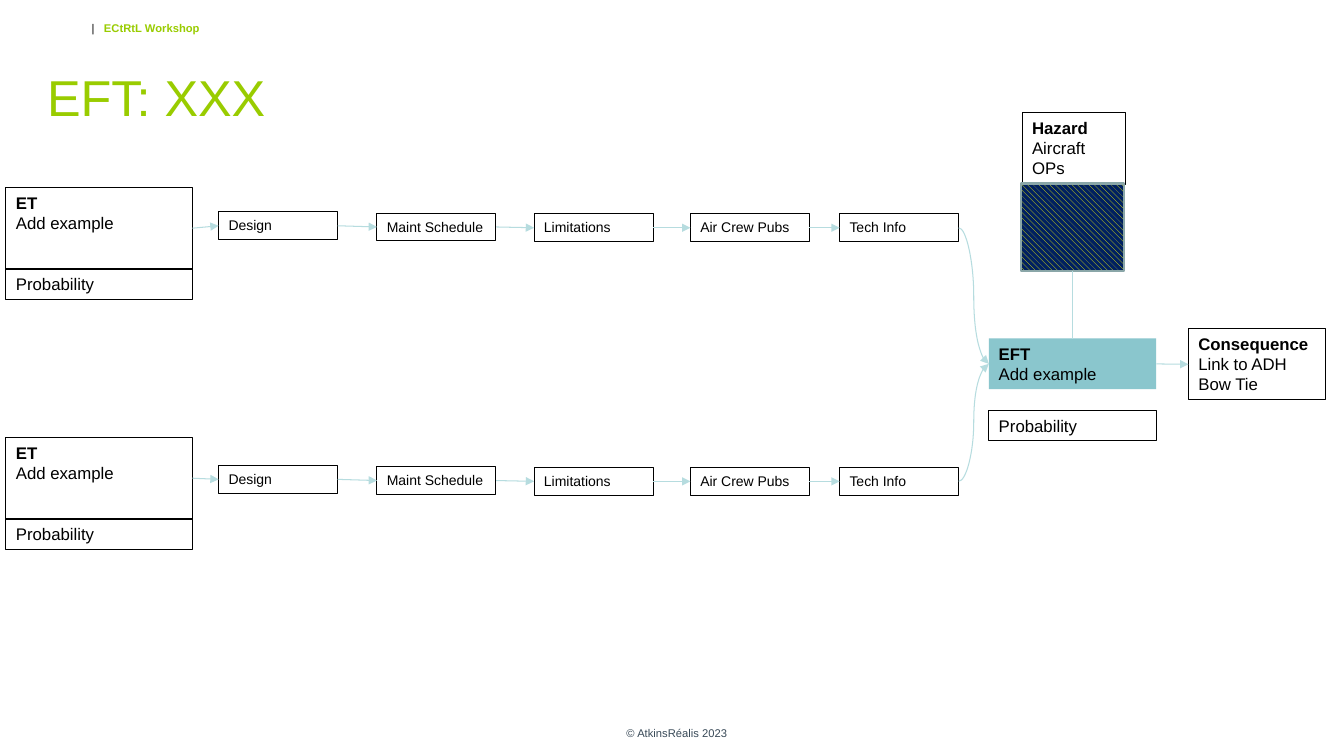
from itertools import pairwise

from lxml import etree
from pptx import Presentation
from pptx.dml.color import RGBColor
from pptx.enum.dml import MSO_PATTERN
from pptx.enum.shapes import MSO_CONNECTOR as Link, MSO_SHAPE as Preset
from pptx.enum.text import MSO_ANCHOR as Anchor, PP_ALIGN as Align
from pptx.oxml.ns import qn
from pptx.util import Cm, Pt

COLORS = {
    "black": "000000",
    "green": "99CC00",
    "slate": "394A58",
    "teal": "8AC6CD",
    "arrow": "B6DCDF",
    "barrier_line": "8AA6A8",
    "yellow": "FFFF00",
    "navy": "002060",
}
TOP, LEFT, BOTTOM, RIGHT = range(4)  # connection sites of a rectangle

# label, left edge, drop below the first step (cm)
STEPS = [
    ("Design", 5.51, 0),
    ("Maint Schedule", 9.5, 0.03),
    ("Limitations", 13.46, 0.05),
    ("Air Crew Pubs", 17.4, 0.05),
    ("Tech Info", 21.16, 0.05),
]
# top of the threat box, top of the first step (cm)
THREAT_ROWS = [(4.72, 5.34), (11.02, 11.73)]


def rgb(color):
    return RGBColor.from_string(COLORS[color])


def add_run(paragraph, text, size=12, color="black", bold=False):
    run = paragraph.add_run()
    run.text = text
    run.font.name = "Arial"
    run.font.size = Pt(size)
    run.font.bold = bold
    run.font.color.rgb = rgb(color)


class Diagram:
    """Draws styled elements on one slide; all positions are in cm."""

    def __init__(self, slide):
        self.slide = slide

    def text(self, at, content, align=Align.LEFT, anchor=Anchor.TOP, **style):
        frame = self.slide.shapes.add_textbox(*map(Cm, at)).text_frame
        frame.word_wrap = True
        frame.vertical_anchor = anchor
        frame.paragraphs[0].alignment = align
        add_run(frame.paragraphs[0], content, **style)
        return frame

    def header(self, at, title):
        frame = self.text(at, "|\t", size=8)
        frame.margin_left = frame.margin_right = 0
        frame.margin_top = frame.margin_bottom = 0
        line = frame.paragraphs[0]
        tabs = etree.SubElement(line._p.get_or_add_pPr(), qn("a:tabLst"))
        etree.SubElement(tabs, qn("a:tab"), pos=str(Cm(0.31)), algn="l")
        add_run(line, title, size=8, color="green", bold=True)

    def box(self, at, heading=None, body=None, size=12, fill=None,
            line="black", line_width=0.75):
        """Rectangle with a bold heading above plain body text."""
        box = self.slide.shapes.add_shape(Preset.RECTANGLE, *map(Cm, at))
        box.shadow.inherit = False
        if fill:
            box.fill.solid()
            box.fill.fore_color.rgb = rgb(fill)
        else:
            box.fill.background()
        if line:
            box.line.color.rgb = rgb(line)
            box.line.width = Pt(line_width)
        else:
            box.line.fill.background()
        frame = box.text_frame
        frame.word_wrap = True
        frame.vertical_anchor = Anchor.TOP
        paragraph = frame.paragraphs[0]
        paragraph.alignment = Align.LEFT
        if heading:
            add_run(paragraph, heading, size, bold=True)
            paragraph = frame.add_paragraph()
            paragraph.alignment = Align.LEFT
        if body:
            add_run(paragraph, body, size)
        return box

    def barrier(self, at):
        barrier = self.box(at, line="barrier_line", line_width=2)
        barrier.fill.patterned()
        barrier.fill.pattern = MSO_PATTERN.WIDE_DOWNWARD_DIAGONAL
        barrier.fill.fore_color.rgb = rgb("yellow")
        barrier.fill.back_color.rgb = rgb("navy")
        return barrier

    def connect(self, start, end, sites=(RIGHT, LEFT), kind=Link.STRAIGHT,
                arrow=True):
        link = self.slide.shapes.add_connector(kind, 0, 0, 0, 0)
        link.begin_connect(start, sites[0])
        link.end_connect(end, sites[1])
        link.line.color.rgb = rgb("arrow")
        link.line.width = Pt(0.75)
        if arrow:
            etree.SubElement(link.line._get_or_add_ln(), qn("a:tailEnd"),
                             type="triangle")
        etree.SubElement(link._element.spPr, qn("a:effectLst"))

    def threat_row(self, threat_top, steps_top, event):
        """Threat with its probability, then the chain of steps to the event."""
        threat = self.box((0.15, threat_top, 4.7, 2.06), "ET", "Add example")
        self.box((0.15, threat_top + 2.06, 4.7, 0.77), body="Probability")
        steps = [self.box((left, steps_top + drop, 3, 0.7), body=label, size=10)
                 for label, left, drop in STEPS]
        for start, end in pairwise([threat, *steps]):
            self.connect(start, end)
        self.connect(steps[-1], event, kind=Link.CURVE)


def main():
    prs = Presentation()
    prs.slide_width, prs.slide_height = Cm(33.87), Cm(19.05)
    diagram = Diagram(prs.slides.add_slide(prs.slide_layouts[6]))

    diagram.header((2.31, 0.53, 25, 1.37), "ECtRtL Workshop")
    diagram.text((0.94, 1.52, 30.68, 1.8), "EFT: XXX", anchor=Anchor.BOTTOM,
                 size=36, color="green")
    diagram.text((11.7, 17.95, 10.72, 1.02), "© AtkinsRéalis 2023",
                 align=Align.CENTER, anchor=Anchor.MIDDLE, size=8, color="slate")

    event = diagram.box((25.12, 8.6, 4.22, 1.28), "EFT", "Add example",
                        fill="teal", line=None)
    event.left, event.top = Cm(24.92), Cm(8.53)
    diagram.box((24.92, 10.34, 4.22, 0.77), body="Probability")
    consequence = diagram.box((29.95, 8.28, 3.45, 1.8), "Consequence",
                              "Link to ADH Bow Tie")
    diagram.box((25.76, 2.84, 2.6, 1.8), "Hazard", "Aircraft OPs")
    barrier = diagram.barrier((25.73, 4.63, 2.6, 2.2))

    for threat_top, steps_top in THREAT_ROWS:
        diagram.threat_row(threat_top, steps_top, event)
    diagram.connect(event, consequence)
    diagram.connect(barrier, event, sites=(BOTTOM, TOP), arrow=False)

    prs.save("out.pptx")


if __name__ == "__main__":
    main()
